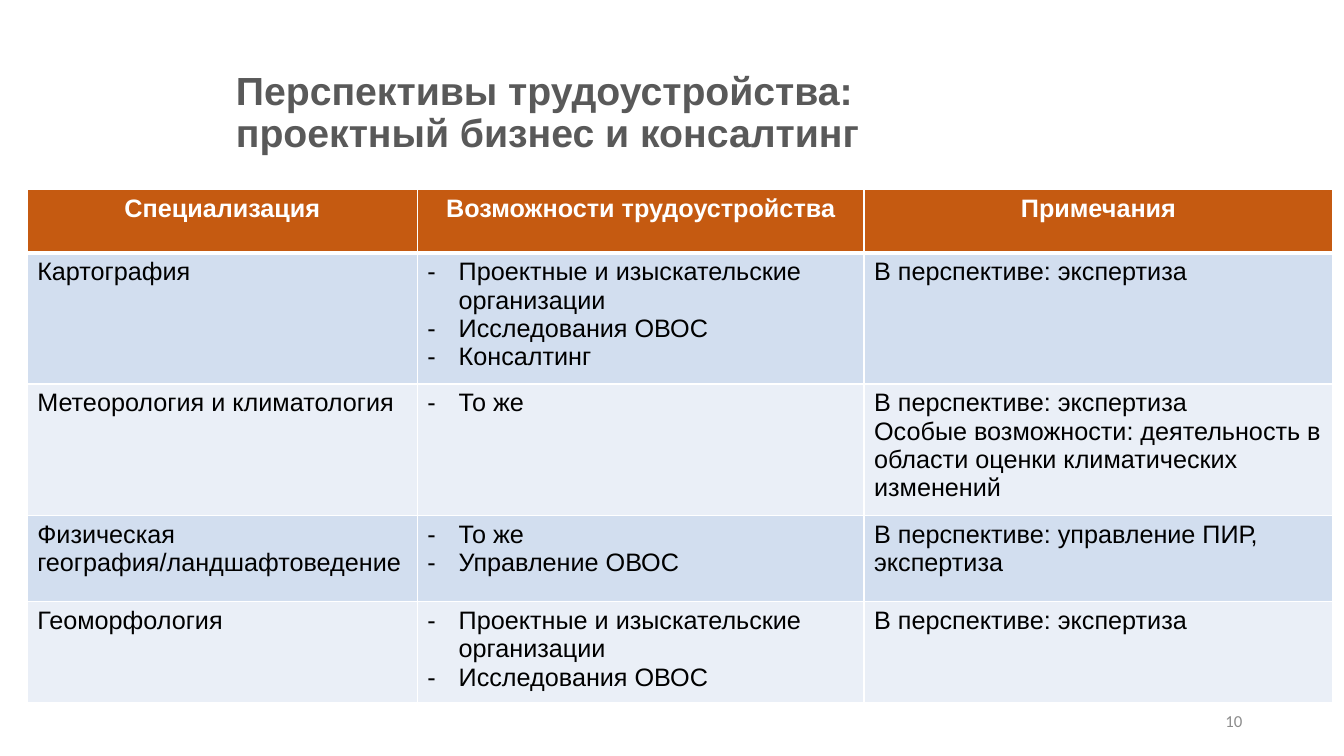
from lxml.etree import SubElement
from pptx import Presentation
from pptx.dml.color import RGBColor as RGB
from pptx.enum.text import MSO_ANCHOR as ANCHOR, MSO_AUTO_SIZE as FIT, PP_ALIGN as ALIGN
from pptx.oxml.ns import qn
from pptx.util import Pt

PX = 9144
COLORS = {
    "title": "595959", "number": "8C8C8C", "header": "C55A11",
    "odd": "D2DEEF", "even": "EAEFF7", "white": "FFFFFF", "text": "000000",
}
COLS = [387, 443, 465]
ROWS = [63, 122, 122, 86, 95]
HEADER = ["Специализация", "Возможности трудоустройства", "Примечания"]
DESIGN = "Проектные и изыскательские организации"
EIA = "Исследования ОВОС"
SAME = "То же"
EXPERTISE = "В перспективе: экспертиза"
CAREERS = [
    ("Картография", [DESIGN, EIA, "Консалтинг"], [EXPERTISE]),
    ("Метеорология и климатология", [SAME],
     [EXPERTISE, "Особые возможности: деятельность в области оценки климатических изменений"]),
    ("Физическая география/ландшафтоведение", [SAME, "Управление ОВОС"],
     ["В перспективе: управление ПИР, экспертиза"]),
    ("Геоморфология", [DESIGN, EIA], [EXPERTISE]),
]


def px(*lengths):
    return [n * PX for n in lengths]


def add_run(p, text, size, color, bold=False, font="Arial"):
    r = p.add_run()
    r.text = text
    r.font.name = font
    r.font.size = Pt(size)
    r.font.bold = bold
    r.font.color.rgb = RGB.from_string(COLORS[color])


def add_title(s, text, box):
    sp = s.shapes.title
    sp.left, sp.top, sp.width, sp.height = px(*box)
    tf = sp.text_frame
    tf.auto_size = FIT.NONE
    tf.word_wrap = True
    tf.vertical_anchor = ANCHOR.MIDDLE
    p = tf.paragraphs[0]
    p.alignment = ALIGN.LEFT
    p.line_spacing = 0.9
    add_run(p, text, 28, "title", True)


def add_page_number(s, text, box):
    tf = s.shapes.add_textbox(*px(*box)).text_frame
    tf.word_wrap = True
    tf.vertical_anchor = ANCHOR.MIDDLE
    p = tf.paragraphs[0]
    p.alignment = ALIGN.RIGHT
    add_run(p, text, 12, "number", font="Calibri")


def add_dash(p):
    pPr = p._p.get_or_add_pPr()
    pPr.set("marL", str(31 * PX))
    pPr.set("indent", str(-31 * PX))
    SubElement(pPr, qn("a:buFont")).set("typeface", "Arial")
    SubElement(pPr, qn("a:buChar")).set("char", "-")


def set_borders(cell, top, bottom):
    tcPr = cell._tc.get_or_add_tcPr()
    for side, width in (("L", 1), ("R", 1), ("T", top), ("B", bottom)):
        ln = SubElement(tcPr, qn(f"a:ln{side}"), w=str(Pt(width)))
        fill = SubElement(ln, qn("a:solidFill"))
        SubElement(fill, qn("a:srgbClr"), val=COLORS["white"])


def fill_cell(cell, lines, fill, header=False, dashed=False, top=1):
    set_borders(cell, top, 3 if header else 1)
    cell.fill.solid()
    cell.fill.fore_color.rgb = RGB.from_string(COLORS[fill])
    tf = cell.text_frame
    for i, line in enumerate(lines):
        p = tf.add_paragraph() if i else tf.paragraphs[0]
        p.alignment = ALIGN.CENTER if header else ALIGN.LEFT
        if dashed:
            add_dash(p)
        add_run(p, line, 18, "white" if header else "text", header)


def add_careers_table(s, left, top):
    box = px(left, top, sum(COLS), sum(ROWS))
    table = s.shapes.add_table(len(ROWS), len(COLS), *box).table
    for col, width in zip(table.columns, px(*COLS)):
        col.width = width
    for row, height in zip(table.rows, px(*ROWS)):
        row.height = height
    for c, name in enumerate(HEADER):
        fill_cell(table.cell(0, c), [name], "header", header=True)
    for r, (field, jobs, notes) in enumerate(CAREERS, 1):
        fill = "odd" if r % 2 else "even"
        for c, lines in enumerate(([field], jobs, notes)):
            fill_cell(table.cell(r, c), lines, fill, dashed=c == 1, top=3 if r == 1 else 1)


def main():
    prs = Presentation()
    prs.slide_width, prs.slide_height = px(1333, 750)
    s = prs.slides.add_slide(prs.slide_layouts[5])
    add_title(s, "Перспективы трудоустройства: проектный бизнес и консалтинг", (224, 74, 641, 78))
    add_page_number(s, "10", (942, 695, 300, 40))
    add_careers_table(s, 27, 188)
    prs.save("out.pptx")


if __name__ == "__main__":
    main()
